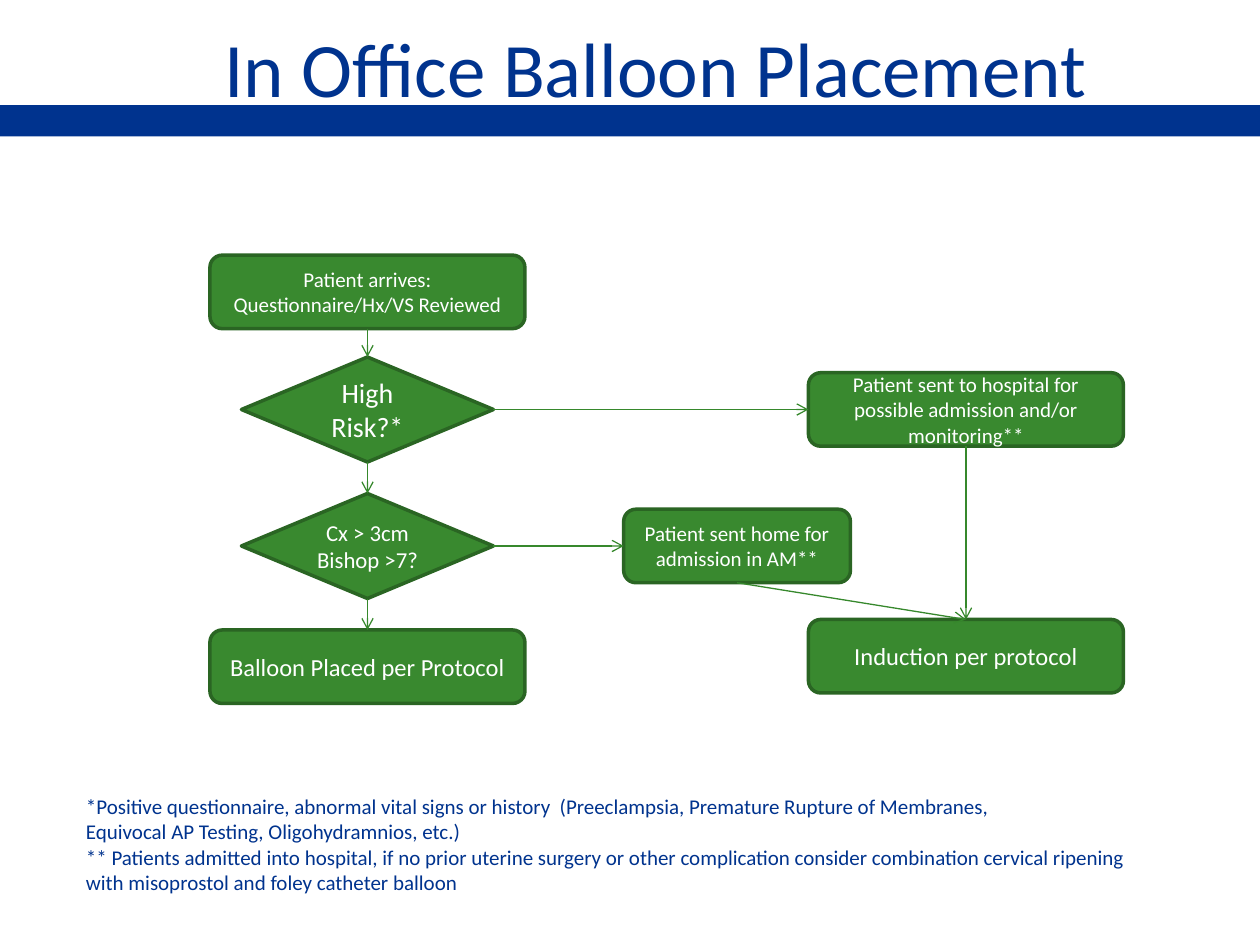
from lxml.etree import SubElement
from pptx import Presentation
from pptx.dml.color import RGBColor
from pptx.enum.shapes import MSO_CONNECTOR, MSO_SHAPE
from pptx.enum.text import MSO_ANCHOR, MSO_AUTO_SIZE, PP_ALIGN
from pptx.oxml.ns import qn
from pptx.util import Inches, Pt

NAVY = RGBColor(0x00, 0x33, 0x8E)
GREEN = RGBColor(0x39, 0x89, 0x2F)
DARK_GREEN = RGBColor(0x2A, 0x65, 0x23)
ARROW_GREEN = RGBColor(0x36, 0x88, 0x2C)
WHITE = RGBColor(0xFF, 0xFF, 0xFF)
FONT = "Calibri"
TOP, LEFT, BOTTOM, RIGHT = range(4)

deck = Presentation()
deck.slide_width, deck.slide_height = Inches(10), Inches(7.5)
COLUMN, ROW = deck.slide_width / 120, deck.slide_height / 90
page = deck.slides.add_slide(deck.slide_layouts[5])


def grid(left, top, width, height):
    return int(left * COLUMN), int(top * ROW), int(width * COLUMN), int(height * ROW)


def style(para, size, color, align):
    para.alignment = align
    para.font.name, para.font.size = FONT, Pt(size)
    para.font.color.rgb = color


bar = page.shapes.add_shape(MSO_SHAPE.RECTANGLE, *grid(0, 10, 120, 3))
bar.shadow.inherit = False
bar.fill.solid()
bar.fill.fore_color.rgb = NAVY
bar.line.fill.background()

title = page.shapes.title
title.left, title.top, title.width, title.height = grid(5, 1, 115, 15)
title.text_frame.text = "In Office Balloon Placement"
title.text_frame.vertical_anchor = MSO_ANCHOR.TOP
title.text_frame.margin_top = Inches(0.08)
style(title.text_frame.paragraphs[0], 44, NAVY, PP_ALIGN.CENTER)

STEP, DECISION = MSO_SHAPE.ROUNDED_RECTANGLE, MSO_SHAPE.FLOWCHART_DECISION
HEIGHTS = {STEP: 7, DECISION: 10}
steps = {
    "arrival": (STEP, 20, 24.3, 30, 12, "Patient arrives: Questionnaire/Hx/VS Reviewed"),
    "risk": (DECISION, 23, 34, 24, 16, "High Risk?*"),
    "cervix": (DECISION, 23, 47, 24, 13, "Cx > 3cm Bishop >7?"),
    "balloon": (STEP, 20, 60, 30, 14, "Balloon Placed per Protocol"),
    "hospital": (STEP, 77, 35.5, 30, 12,
                 "Patient sent to hospital for possible admission and/or monitoring**"),
    "home": (STEP, 59.4, 48.5, 21.6, 12, "Patient sent home for admission in AM**"),
    "induction": (STEP, 77, 59, 30, 14, "Induction per protocol"),
}
nodes = {}
for name, (kind, left, top, width, size, wording) in steps.items():
    node = page.shapes.add_shape(kind, *grid(left, top, width, HEIGHTS[kind]))
    node.shadow.inherit = False
    node.fill.solid()
    node.fill.fore_color.rgb = GREEN
    node.line.color.rgb = DARK_GREEN
    node.line.width = Pt(2)
    node.text_frame.text = wording
    node.text_frame.word_wrap = True
    node.text_frame.vertical_anchor = MSO_ANCHOR.MIDDLE
    style(node.text_frame.paragraphs[0], size, WHITE, PP_ALIGN.CENTER)
    nodes[name] = node

links = [
    ("arrival", BOTTOM, "risk", TOP),
    ("risk", BOTTOM, "cervix", TOP),
    ("cervix", BOTTOM, "balloon", TOP),
    ("risk", RIGHT, "hospital", LEFT),
    ("cervix", RIGHT, "home", LEFT),
    ("home", BOTTOM, "induction", TOP),
    ("hospital", BOTTOM, "induction", TOP),
]
for source, source_side, target, target_side in links:
    arrow = page.shapes.add_connector(MSO_CONNECTOR.STRAIGHT, 0, 0, 0, 0)
    arrow.begin_connect(nodes[source], source_side)
    arrow.end_connect(nodes[target], target_side)
    arrow.line.color.rgb = ARROW_GREEN
    arrow.line.width = Pt(0.75)
    SubElement(arrow.line._get_or_add_ln(), qn("a:tailEnd"), type="arrow")
    SubElement(arrow._element.spPr, qn("a:effectLst"))

footnotes = [
    "*Positive questionnaire, abnormal vital signs or history  (Preeclampsia, Premature Rupture of Membranes,",
    "Equivocal AP Testing, Oligohydramnios, etc.)",
    "** Patients admitted into hospital, if no prior uterine surgery or other complication consider combination cervical ripening",
    "with misoprostol and foley catheter balloon",
]
box = page.shapes.add_textbox(*grid(7, 75, 102.8, 13.3))
box.text_frame.word_wrap = False
box.text_frame.auto_size = MSO_AUTO_SIZE.SHAPE_TO_FIT_TEXT
box.text_frame.text = "\n".join(footnotes)
for para in box.text_frame.paragraphs:
    style(para, 12, NAVY, PP_ALIGN.LEFT)

deck.save("out.pptx")
